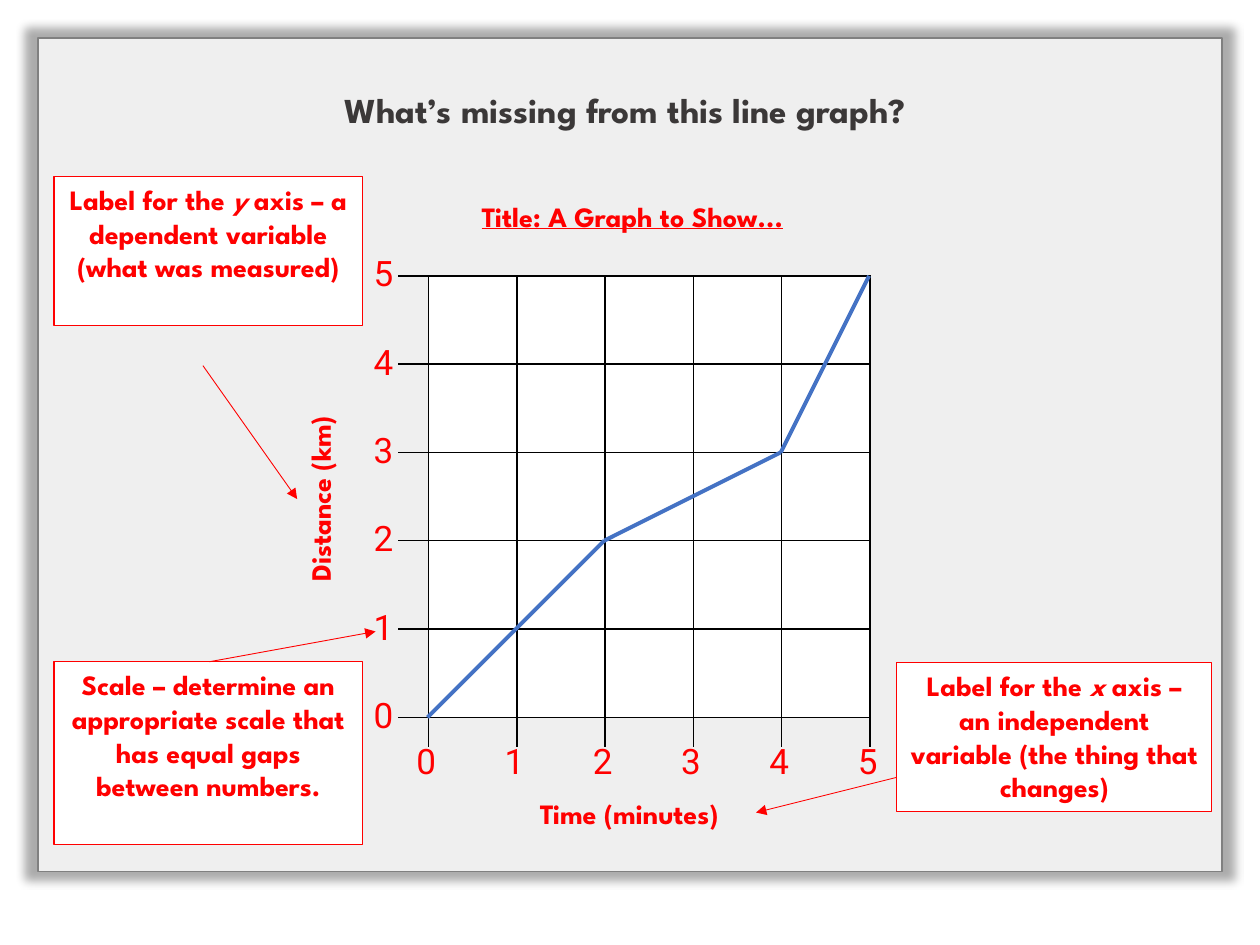
"""Build a slide that asks what is missing from a line graph."""
import itertools
from dataclasses import dataclass

import pptx
import pptx.dml.color
import pptx.enum.shapes
import pptx.enum.text
import pptx.oxml
import pptx.oxml.ns
import pptx.shapes.base
import pptx.slide
import pptx.table
import pptx.text.text
import pptx.util
from pptx.util import Cm

COLORS = {
    "paper": "FFFFFF", "frame": "808080", "heading": "3B3838",
    "answer": "FF0000", "grid": "000000", "plot": "4472C4",
}
HEADING_FONT = "League Spartan"
NUMBER_FONT = "Roboto"
PLAIN_TABLE_STYLE = "{2D5ABB26-0587-4C30-8999-92F81FD0307C}"
STEP = 1.78
TICK = 0.59
INTERVALS = 5
GRID_LEFT, GRID_TOP = 8.03, 5.56
ORIGIN_X = GRID_LEFT + TICK
ORIGIN_Y = GRID_TOP + INTERVALS * STEP
JOURNEY = [(0, 0), (2, 2), (4, 3), (5, 5)]


@dataclass
class Box:
    """A rectangle in centimetres."""
    left: float
    top: float
    width: float
    height: float

    def lengths(self) -> tuple:
        return Cm(self.left), Cm(self.top), Cm(self.width), Cm(self.height)


@dataclass
class Label:
    """Red wording beside the graph."""
    box: Box
    wording: str
    underline: bool = False
    rotation: int = 0


@dataclass
class Hint:
    """A framed explanation, with an optional italic variable name."""
    box: Box
    before: str
    variable: str = ""
    after: str = ""


@dataclass
class Segment:
    """A straight line between two points in centimetres."""
    start: tuple
    end: tuple
    color: str
    weight: float
    arrow: bool = False


LABELS = [
    Label(Box(7.82, 3.89, 9.86, 0.94), "Title: A Graph to Show...", underline=True),
    Label(Box(10.16, 15.93, 5.05, 0.94), "Time (minutes)"),
    Label(Box(1.98, 9.58, 8.94, 0.94), "Distance (km)", rotation=270),
]
HINTS = [
    Hint(Box(18.08, 13.36, 6.35, 3), "Label for the ", "x",
         " axis – an independent variable (the thing that changes)"),
    Hint(Box(1.09, 3.56, 6.22, 3), "Label for the ", "y",
         " axis – a dependent variable (what was measured)"),
    Hint(Box(1.09, 13.34, 6.22, 3.68),
         "Scale – determine an appropriate scale that has equal gaps between numbers."),
]
POINTERS = [
    ((4.09, 7.37), (5.99, 10.06)),
    ((4.22, 13.34), (7.57, 12.73)),
    ((18.08, 15.67), (15.24, 16.38)),
]


def rgb(name: str) -> pptx.dml.color.RGBColor:
    return pptx.dml.color.RGBColor.from_string(COLORS[name])


def xml(source: str):
    return pptx.oxml.parse_xml(source.replace(" ", f" {pptx.oxml.ns.nsdecls('a')} ", 1))


def add_run(paragraph: pptx.text.text._Paragraph, wording: str, size: float = 16,
            color: str = "answer", face: str = HEADING_FONT, bold: bool = True,
            italic: bool = False, underline: bool = False) -> None:
    paragraph.alignment = pptx.enum.text.PP_ALIGN.CENTER
    run = paragraph.add_run()
    run.text = wording
    font = run.font
    font.name, font.size, font.bold = face, pptx.util.Pt(size), bold
    font.italic, font.underline = italic, underline
    font.color.rgb = rgb(color)


def add_rectangle(slide: pptx.slide.Slide, box: Box, line: str,
                  weight: float) -> pptx.shapes.base.BaseShape:
    rectangle = slide.shapes.add_shape(
        pptx.enum.shapes.MSO_SHAPE.RECTANGLE, *box.lengths())
    rectangle.shadow.inherit = False
    rectangle.fill.solid()
    rectangle.fill.fore_color.rgb = rgb("paper")
    rectangle.line.color.rgb = rgb(line)
    rectangle.line.width = pptx.util.Pt(weight)
    rectangle.text_frame.word_wrap = True
    rectangle.text_frame.vertical_anchor = pptx.enum.text.MSO_ANCHOR.TOP
    return rectangle


def add_panel(slide: pptx.slide.Slide) -> None:
    panel = add_rectangle(slide, Box(0.76, 0.76, 23.88, 16.81), "frame", 1)
    properties = panel._element.spPr
    color = properties.find(".//" + pptx.oxml.ns.qn("a:srgbClr"))
    color.append(xml('<a:alpha val="82000"/>'))
    properties.find(pptx.oxml.ns.qn("a:effectLst")).append(xml(
        '<a:outerShdw blurRad="63500" sx="102000" sy="102000" algn="ctr" rotWithShape="0">'
        '<a:prstClr val="black"><a:alpha val="40000"/></a:prstClr></a:outerShdw>'))
    slide.shapes._spTree.insert(2, panel._element)


def add_heading(slide: pptx.slide.Slide) -> None:
    heading = slide.shapes.title
    heading.left, heading.top, heading.width, heading.height = Box(
        0.76, 1.4, 23.7, 1.62).lengths()
    heading.text_frame.vertical_anchor = pptx.enum.text.MSO_ANCHOR.MIDDLE
    add_run(heading.text_frame.paragraphs[0], "What’s missing from this line graph?",
            size=20, color="heading")


def add_plain_table(slide: pptx.slide.Slide, left: float, top: float,
                    widths: list[float], heights: list[float]) -> pptx.table.Table:
    box = Box(left, top, sum(widths), sum(heights))
    table = slide.shapes.add_table(len(heights), len(widths), *box.lengths()).table
    table.first_row = table.horz_banding = False
    table._tbl.tblPr.find(pptx.oxml.ns.qn("a:tableStyleId")).text = PLAIN_TABLE_STYLE
    for column, width in zip(table.columns, widths):
        column.width = Cm(width)
    for row, height in zip(table.rows, heights):
        row.height = Cm(height)
    return table


def add_grid(slide: pptx.slide.Slide) -> None:
    squares = [STEP] * INTERVALS
    table = add_plain_table(slide, GRID_LEFT, GRID_TOP, [TICK] + squares, squares + [TICK])
    for row, column in itertools.product(range(INTERVALS + 1), repeat=2):
        cell = table.cell(row, column)
        cell.margin_top = cell.margin_bottom = 0
        cell.text_frame.paragraphs[0]._p.append(xml('<a:endParaRPr sz="800"/>'))
        sides = ("L" if column else "") + "RT" + ("B" if row < INTERVALS else "")
        for side in sides:
            cell._tc.get_or_add_tcPr().append(xml(
                f'<a:ln{side} w="12700"><a:solidFill><a:srgbClr val="{COLORS["grid"]}"/>'
                f'</a:solidFill></a:ln{side}>'))
        if column and row < INTERVALS:
            cell.fill.solid()
            cell.fill.fore_color.rgb = rgb("paper")
        else:
            cell.fill.background()


def add_scale(slide: pptx.slide.Slide, left: float, top: float,
              widths: list[float], heights: list[float], numbers: list[int]) -> None:
    table = add_plain_table(slide, left, top, widths, heights)
    for cell, number in zip(table.iter_cells(), numbers):
        cell.fill.background()
        add_run(cell.text_frame.paragraphs[0], str(number), size=20,
                face=NUMBER_FONT, bold=False)


def add_label(slide: pptx.slide.Slide, label: Label) -> None:
    textbox = slide.shapes.add_textbox(*label.box.lengths())
    textbox.rotation = label.rotation
    textbox.text_frame.word_wrap = True
    add_run(textbox.text_frame.paragraphs[0], label.wording, underline=label.underline)


def add_hint(slide: pptx.slide.Slide, hint: Hint) -> None:
    paragraph = add_rectangle(slide, hint.box, "answer", 0.75).text_frame.paragraphs[0]
    add_run(paragraph, hint.before)
    if hint.variable:
        add_run(paragraph, hint.variable, italic=True)
        add_run(paragraph, hint.after)


def add_segment(slide: pptx.slide.Slide, segment: Segment) -> None:
    ends = [Cm(value) for value in segment.start + segment.end]
    connector = slide.shapes.add_connector(
        pptx.enum.shapes.MSO_CONNECTOR.STRAIGHT, *ends)
    connector.line.color.rgb = rgb(segment.color)
    connector.line.width = pptx.util.Pt(segment.weight)
    if segment.arrow:
        connector.line._get_or_add_ln().append(xml('<a:tailEnd type="triangle"/>'))
    connector._element.spPr.append(xml("<a:effectLst />"))


def main() -> None:
    deck = pptx.Presentation()
    deck.slide_width, deck.slide_height = Cm(25.4), Cm(19.05)
    slide = deck.slides.add_slide(deck.slide_layouts[5])
    add_panel(slide)
    add_heading(slide)
    add_grid(slide)
    for label in LABELS:
        add_label(slide, label)
    for hint in HINTS:
        add_hint(slide, hint)
    numbers = list(range(INTERVALS + 1))
    steps = [STEP] * len(numbers)
    add_scale(slide, 7.7, 14.83, steps, [1.04], numbers)
    add_scale(slide, 7.11, 5, [1.24], steps, numbers[::-1])
    for start, end in POINTERS:
        add_segment(slide, Segment(start, end, "answer", 0.5, arrow=True))
    stops = [(ORIGIN_X + STEP * x, ORIGIN_Y - STEP * y) for x, y in JOURNEY]
    for start, end in itertools.pairwise(stops):
        add_segment(slide, Segment(start, end, "plot", 2.25))
    deck.save("out.pptx")


if __name__ == "__main__":
    main()
